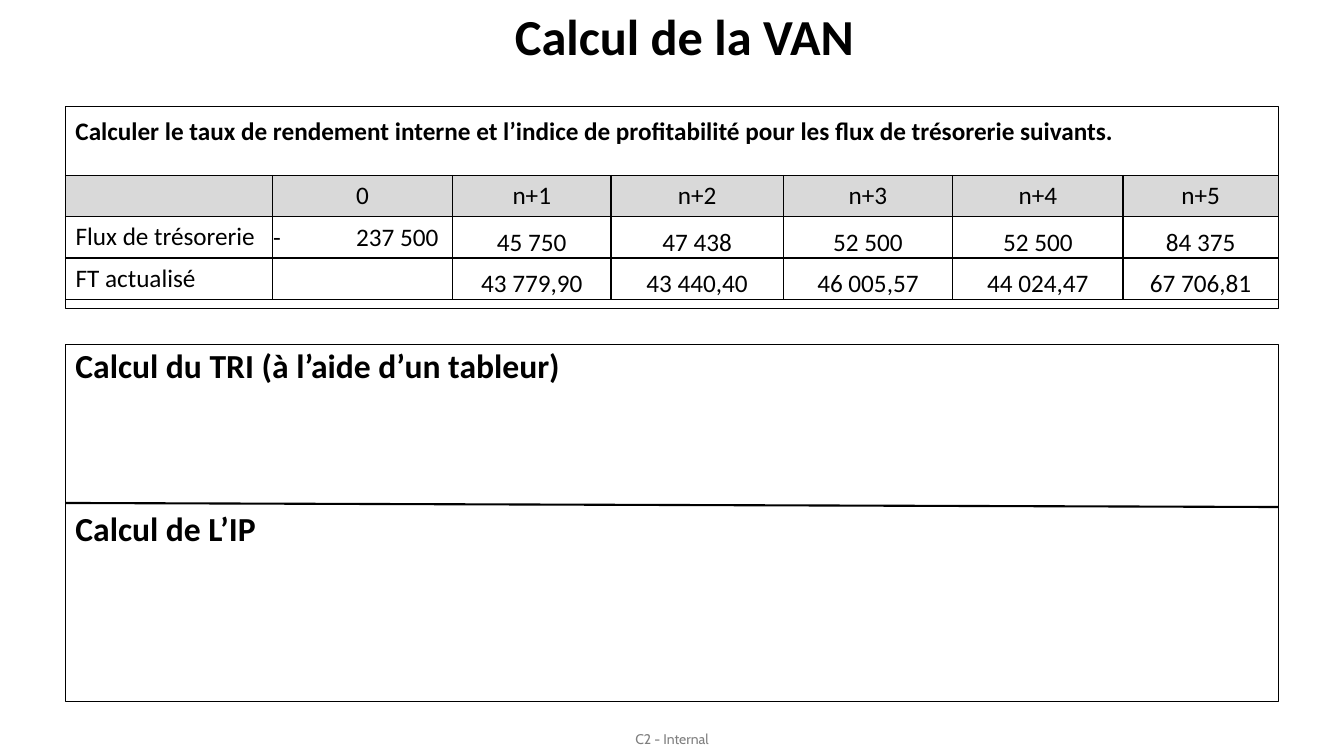
from dataclasses import dataclass

from lxml import etree
from pptx import Presentation
from pptx import util as u
from pptx.dml import color
from pptx.enum import shapes, text
from pptx.oxml import ns

Inches, Pt = u.Inches, u.Pt
LEFT, WIDTH = 0.65, 12.03
MID = text.PP_ALIGN.CENTER
TOP, BASE = text.MSO_ANCHOR.TOP, text.MSO_ANCHOR.BOTTOM


def rgb(code):
    return color.RGBColor.from_string(code)


@dataclass(frozen=True)
class Theme:
    face: str = "Calibri"
    foot: str = "Cabin"
    ink: str = "000000"
    paper: str = "FFFFFF"
    band: str = "D9D9D9"
    mute: str = "7F7F7F"
    title: int = 36
    head: int = 24
    body: int = 18
    small: int = 10


class Deck:
    def __init__(self, theme):
        self.theme = theme
        self.prs = Presentation()
        self.prs.slide_width = Inches(13.33)
        self.prs.slide_height = Inches(7.5)
        self.slide = self.prs.slides.add_slide(self.prs.slide_layouts[6])

    def add(self, para, words, size, bold=False, face=None, ink=None):
        run = para.add_run()
        run.text = words
        run.font.name = face or self.theme.face
        run.font.size = Pt(size)
        run.font.bold = bold
        run.font.color.rgb = rgb(ink or self.theme.ink)

    def label(self, words, area, size, **style):
        frame = self.slide.shapes.add_textbox(*map(Inches, area)).text_frame
        frame.word_wrap = True
        frame.vertical_anchor = text.MSO_ANCHOR.MIDDLE
        frame.margin_left = frame.margin_right = 0
        frame.margin_top = frame.margin_bottom = 0
        para = frame.paragraphs[0]
        para.alignment = MID
        para.line_spacing = 0.9
        self.add(para, words, size, **style)

    def panel(self, heads, top, height, size, inset=0, gap=0):
        box = self.slide.shapes.add_shape(
            shapes.MSO_SHAPE.RECTANGLE,
            *map(Inches, (LEFT, top, WIDTH, height)))
        box.shadow.inherit = False
        box.fill.solid()
        box.fill.fore_color.rgb = rgb(self.theme.paper)
        box.line.color.rgb = rgb(self.theme.ink)
        box.line.width = Pt(1)
        frame = box.text_frame
        frame.word_wrap = True
        frame.vertical_anchor = TOP
        frame.margin_top = Inches(inset)
        for i, head in enumerate(heads):
            para = frame.add_paragraph() if i else frame.paragraphs[0]
            para.alignment = text.PP_ALIGN.LEFT
            if i:
                para.space_before = Pt(gap)
            self.add(para, head, size, bold=True)

    def edge(self, cell):
        props = cell._tc.get_or_add_tcPr()
        for side in "LRTB":
            edge = etree.SubElement(props, ns.qn(f"a:ln{side}"), w=str(Pt(1)))
            fill = etree.SubElement(edge, ns.qn("a:solidFill"))
            etree.SubElement(fill, ns.qn("a:srgbClr"), val=self.theme.ink)

    def tab(self, para, stop):
        tabs = etree.SubElement(para._p.get_or_add_pPr(), ns.qn("a:tabLst"))
        etree.SubElement(tabs, ns.qn("a:tab"), pos=str(Inches(stop)), algn="r")

    def cell(self, cell, words, row, col):
        self.edge(cell)
        if row:
            cell.fill.background()
        else:
            cell.fill.solid()
            cell.fill.fore_color.rgb = rgb(self.theme.band)
        if not words:
            return
        para = cell.text_frame.paragraphs[0]
        signed = "\t" in words
        if row and col:
            cell.margin_left = cell.margin_right = cell.margin_top = Inches(0.01)
            cell.margin_bottom = 0
            cell.vertical_anchor = text.MSO_ANCHOR.MIDDLE if signed else BASE
        if signed:
            self.tab(para, 1.64)
        elif col:
            para.alignment = MID
        self.add(para, words, self.theme.body)

    def table(self, rows, widths, top, step):
        area = (LEFT, top, WIDTH, step * len(rows))
        grid = self.slide.shapes.add_table(
            len(rows), len(widths), *map(Inches, area)).table
        grid.first_row = grid.horz_banding = False
        for col, width in zip(grid.columns, widths):
            col.width = Inches(width)
        for r, row in enumerate(rows):
            grid.rows[r].height = Inches(step)
            for c, words in enumerate(row):
                self.cell(grid.cell(r, c), words, r, c)

    def line(self, start, end):
        rule = self.slide.shapes.add_connector(
            shapes.MSO_CONNECTOR.STRAIGHT, *map(Inches, start + end))
        rule.line.color.rgb = rgb(self.theme.ink)
        rule.line.width = Pt(1.5)
        etree.SubElement(rule._element.spPr, ns.qn("a:effectLst"))


def main():
    theme = Theme()
    deck = Deck(theme)
    deck.label("C2 - Internal", (6.2, 7.26, 0.93, 0.17), theme.small,
               face=theme.foot, ink=theme.mute)
    deck.panel(["Calcul du TRI (à l’aide d’un tableur)", "Calcul de L’IP"],
               3.42, 3.54, theme.head, gap=88)
    deck.panel(["Calculer le taux de rendement interne et l’indice de "
                "profitabilité pour les flux de trésorerie suivants."],
               1.06, 2, theme.body, inset=0.08)
    rows = [
        ["", "0"] + [f"n+{n}" for n in range(1, 6)],
        ["Flux de trésorerie", "-\t237 500", "45 750", "47 438", "52 500",
         "52 500", "84 375"],
        ["FT actualisé", "", "43 779,90", "43 440,40", "46 005,57",
         "44 024,47", "67 706,81"],
    ]
    deck.table(rows, [2.05, 1.79, 1.57, 1.71, 1.68, 1.69, 1.54], 1.74, 0.41)
    deck.line((LEFT, 4.99), (LEFT + WIDTH, 5.03))
    deck.label("Calcul de la VAN", (1.04, 0.09, 11.5, 0.6), theme.title,
               bold=True)
    deck.prs.save("out.pptx")


if __name__ == "__main__":
    main()
